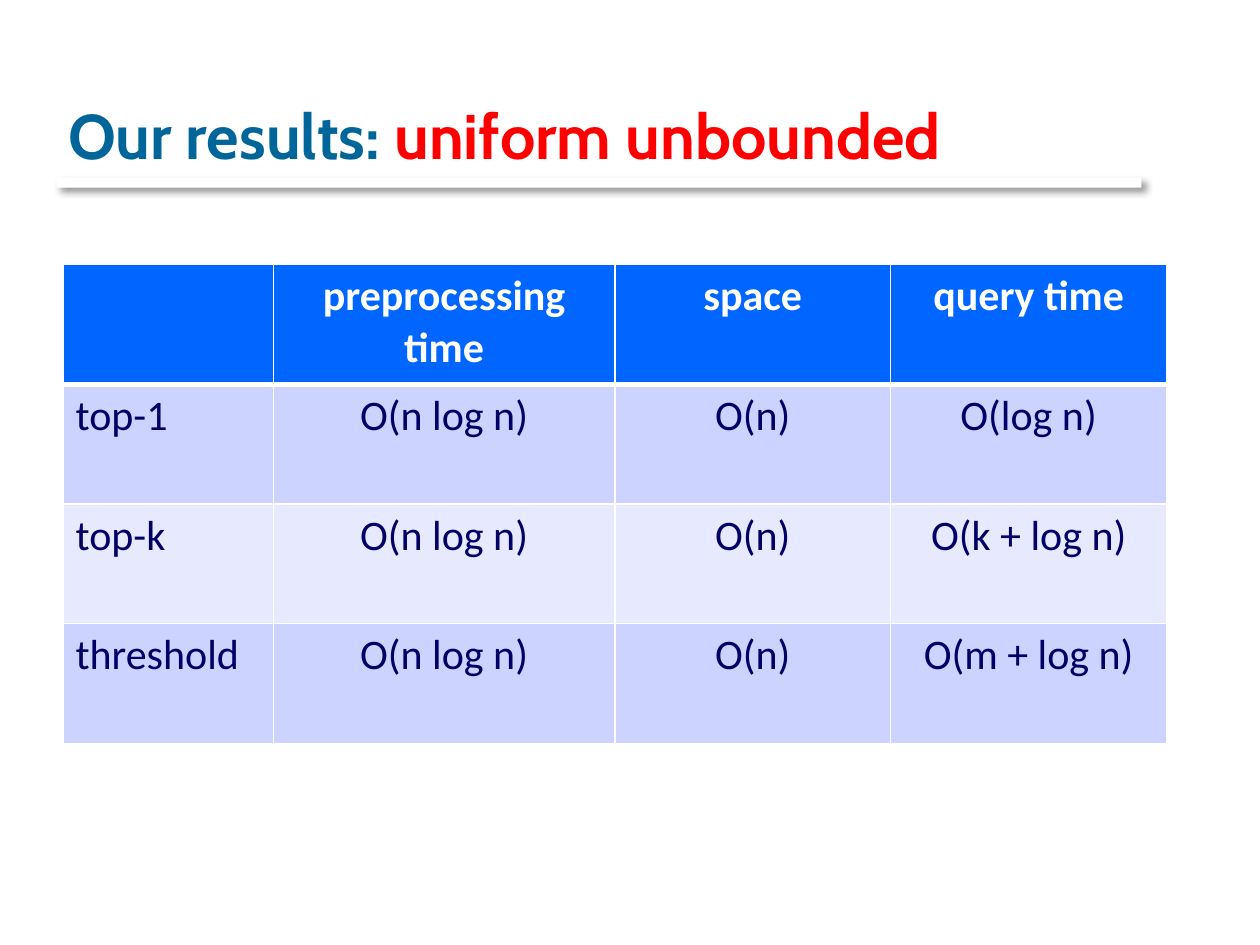
from lxml import etree
from pptx import Presentation
from pptx.dml.color import RGBColor
from pptx.enum import shapes, text
from pptx.oxml import ns
from pptx import util as u

TEAL = RGBColor(0x00, 0x66, 0x99)
RED = RGBColor(0xFF, 0x00, 0x00)
BLUE = RGBColor(0x00, 0x66, 0xFF)
NAVY = RGBColor(0x00, 0x00, 0x66)
WHITE = RGBColor(0xFF, 0xFF, 0xFF)
BANDS = (RGBColor(0xCC, 0xD3, 0xFF), RGBColor(0xE7, 0xEA, 0xFF))

WIDE, HIGH = u.Inches(10), u.Inches(7.5)
COLS = (1.67, 2.71, 2.19, 2.19)
ROWS = (
    ("", "preprocessing time", "space", "query time"),
    ("top-1", "O(n log n)", "O(n)", "O(log n)"),
    ("top-k", "O(n log n)", "O(n)", "O(k + log n)"),
    ("threshold", "O(n log n)", "O(n)", "O(m + log n)"),
)


def area(left, top, width, height):
    """Turn inches into a box."""
    return [u.Inches(n) for n in (left, top, width, height)]


def add(node, tag, **attrs):
    return etree.SubElement(node, ns.qn(tag), {k: str(v) for k, v in attrs.items()})


def place(shape, box):
    shape.left, shape.top, shape.width, shape.height = box


def title(slide, box, parts):
    shape = slide.shapes.title
    place(shape, box)
    frame = shape.text_frame
    frame.word_wrap = True
    frame.auto_size = text.MSO_AUTO_SIZE.NONE
    frame.vertical_anchor = text.MSO_ANCHOR.BOTTOM
    para = frame.paragraphs[0]
    para.alignment = text.PP_ALIGN.LEFT
    para.font.name, para.font.size, para.font.bold = "Cabin", u.Pt(36), True
    for words, color in parts:
        run = para.add_run()
        run.text = words
        run.font.color.rgb = color


def rule(slide, box):
    """Draw a white bar that shows only by its soft shadow."""
    bar = slide.shapes.add_shape(shapes.MSO_SHAPE.RECTANGLE, *box)
    bar.fill.solid()
    bar.fill.fore_color.rgb = WHITE
    bar.line.fill.background()
    effects = add(bar._element.spPr, "a:effectLst")
    shadow = add(effects, "a:outerShdw", blurRad=u.Pt(4), dist=u.Pt(3),
                 dir=45 * 60000, algn="ctr", rotWithShape=0)
    color = add(shadow, "a:srgbClr", val="000000")
    add(color, "a:alpha", val=40000)


def border(cell, base):
    """Edge a cell in white; base is the width of its bottom line."""
    props = cell._tc.get_or_add_tcPr()
    for spot, (side, width) in enumerate(zip("LRTB", (1, 1, 1, base))):
        line = add(props, f"a:ln{side}", w=u.Pt(width))
        add(add(line, "a:solidFill"), "a:srgbClr", val=WHITE)
        props.insert(spot, line)


def grid(slide, box, rows, cols):
    table = slide.shapes.add_table(len(rows), len(cols), *box).table
    for col, width in zip(table.columns, cols):
        col.width = u.Inches(width)
    for r, words in enumerate(rows):
        head = r == 0
        table.rows[r].height = box[3] // len(rows)
        for c, word in enumerate(words):
            cell = table.cell(r, c)
            cell.text = word
            cell.fill.solid()
            cell.fill.fore_color.rgb = BLUE if head else BANDS[(r - 1) % 2]
            border(cell, 3 if head else 1)
            para = cell.text_frame.paragraphs[0]
            para.alignment = text.PP_ALIGN.CENTER if c else text.PP_ALIGN.LEFT
            font = para.font
            font.name, font.size, font.bold = "Calibri", u.Pt(24), head
            font.color.rgb = WHITE if head else NAVY


def main():
    deck = Presentation()
    deck.slide_width, deck.slide_height = WIDE, HIGH
    slide = deck.slides.add_slide(deck.slide_layouts[5])
    rule(slide, area(0.45, 1.41, 8.61, 0.08))
    title(slide, area(0.44, 0.17, 8.5, 1.25),
          (("Our results: ", TEAL), ("uniform unbounded", RED)))
    grid(slide, area(0.5, 2.1, sum(COLS), 3.8), ROWS, COLS)
    deck.save("out.pptx")


if __name__ == "__main__":
    main()
